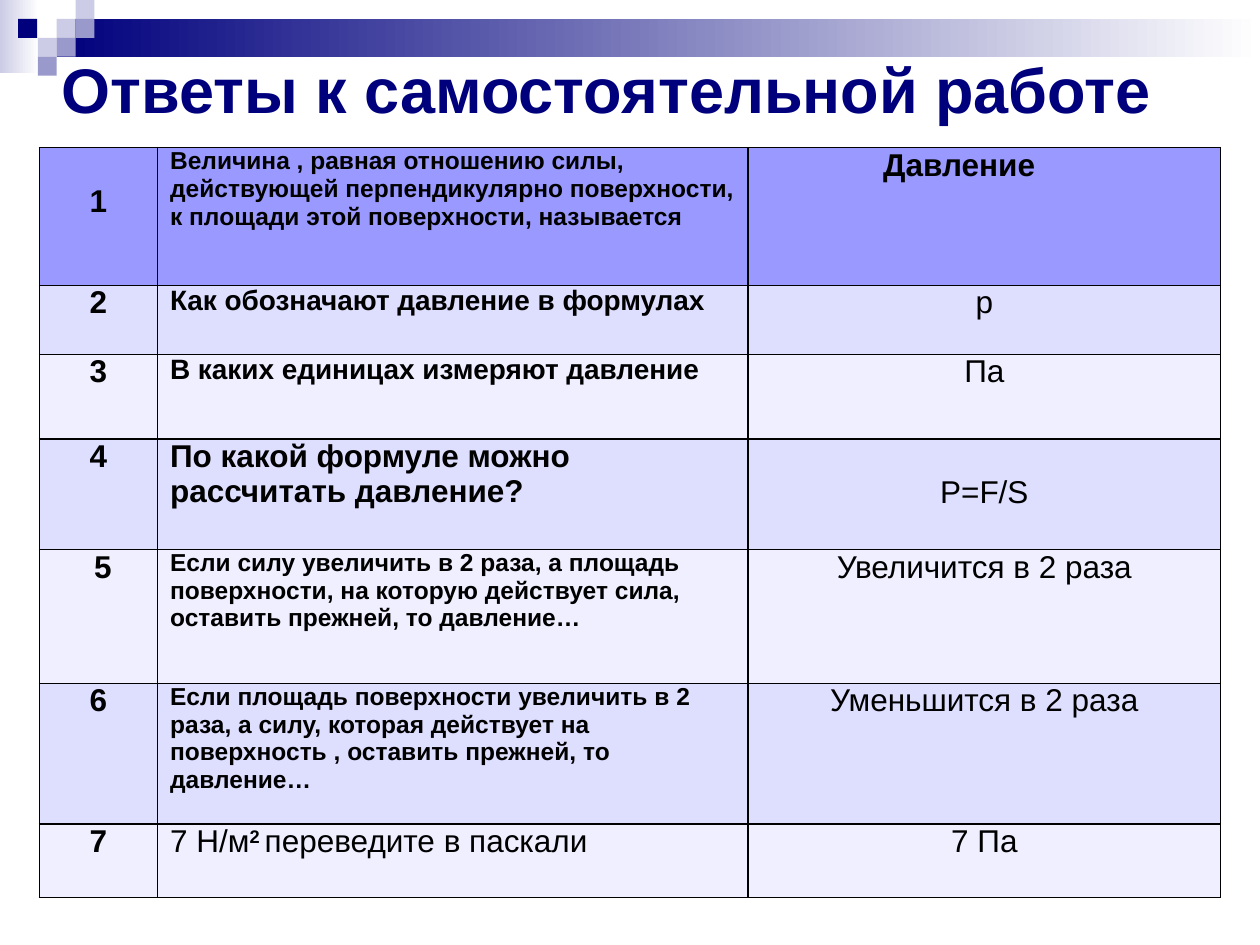
from lxml import etree
from pptx import Presentation
from pptx.dml.color import RGBColor
from pptx.enum import shapes, text
from pptx.oxml import ns
from pptx.util import Pt

COLORS = {
    "navy": "00007D", "mid": "9999CC", "pale": "CCCCE6", "white": "FFFFFF",
    "black": "000000", "head": "9999FF", "even": "DEDEFF", "odd": "EFEFFF",
}


def color(name):
    return RGBColor.from_string(COLORS[name])


def write(frame, words, size=18, bold=True, ink="black", center=False, sup=False):
    """Add a run to the frame's first paragraph."""
    para = frame.paragraphs[0]
    para.alignment = text.PP_ALIGN.CENTER if center else text.PP_ALIGN.LEFT
    run = para.add_run()
    run.text = words
    run.font.name = "Arial"
    run.font.size = Pt(size)
    run.font.bold = bold
    run.font.color.rgb = color(ink)
    if sup:
        run.font._element.set("baseline", "30000")


deck = Presentation()
deck.slide_width, deck.slide_height = Pt(720), Pt(540)
slide = deck.slides.add_slide(deck.slide_layouts[5])

# Corner ornament: two fading bands and small squares
tiles = [
    (0, 0, 22.3, 41.8, "pale", True),
    (32.4, 10.8, 687.6, 21.6, "navy", True),
]
squares = [
    (32.4, 10.8, "pale"), (43.2, 0, "pale"), (43.2, 10.8, "mid"),
    (21.6, 21.6, "pale"), (10.4, 10.8, "navy"), (32.4, 21.6, "mid"),
    (21.6, 32.4, "mid"),
]
tiles += [(x, y, 10.8, 10.8, tone, False) for x, y, tone in squares]
for x, y, w, h, tone, fade in tiles:
    tile = slide.shapes.add_shape(
        shapes.MSO_SHAPE.RECTANGLE, Pt(x), Pt(y), Pt(w), Pt(h))
    tile.shadow.inherit = False
    tile.line.fill.background()
    if fade:
        tile.fill.gradient()
        tile.fill.gradient_angle = 0
        for stop, name in zip(tile.fill.gradient_stops, (tone, "white")):
            stop.color.rgb = color(name)
    else:
        tile.fill.solid()
        tile.fill.fore_color.rgb = color(tone)

title = slide.shapes.title
title.left, title.top, title.width, title.height = Pt(28), Pt(22.3), Pt(648), Pt(56.2)
title.text_frame.vertical_anchor = text.MSO_ANCHOR.MIDDLE
write(title.text_frame, "Ответы к самостоятельной работе", size=36, ink="navy")

# Question, its size, answer
rows = [
    ("Величина , равная отношению силы, действующей перпендикулярно "
     "поверхности, к площади этой поверхности, называется", 14, "Давление"),
    ("Как обозначают давление в формулах", 16, "р"),
    ("В каких единицах измеряют давление", 16, "Па"),
    ("По какой формуле можно рассчитать давление?", 18, "Р=F/S"),
    ("Если силу увеличить в 2 раза, а площадь поверхности, на которую "
     "действует сила, оставить прежней, то давление…", 14, "Увеличится в 2 раза"),
    ("Если площадь поверхности увеличить в 2 раза, а силу, которая действует "
     "на поверхность , оставить прежней, то давление…", 14, "Уменьшится в 2 раза"),
    ("", 18, "7 Па"),
]
widths = [67.5, 337.5, 270]
heights = [78.7, 39.4, 48.4, 63.2, 76.5, 80.3, 42]
table = slide.shapes.add_table(
    len(rows), len(widths), Pt(22.5), Pt(84.4), Pt(sum(widths)), Pt(sum(heights))).table
table.first_row = table.horz_banding = False
for col, width in zip(table.columns, widths):
    col.width = Pt(width)
for row, height in zip(table.rows, heights):
    row.height = Pt(height)

for i, (ask, size, answer) in enumerate(rows):
    for cell in table.rows[i].cells:
        cell.margin_left = cell.margin_right = Pt(7.2)
        cell.margin_top = cell.margin_bottom = 0
        props = cell._tc.get_or_add_tcPr()
        for side in ("lnL", "lnR", "lnT", "lnB"):
            line = etree.SubElement(props, ns.qn("a:" + side), w=str(Pt(1)))
            fill = etree.SubElement(line, ns.qn("a:solidFill"))
            etree.SubElement(fill, ns.qn("a:srgbClr"), val=COLORS["black"])
        cell.fill.solid()
        cell.fill.fore_color.rgb = color("head" if i == 0 else "even" if i % 2 else "odd")
    number, query, reply = table.rows[i].cells
    write(number.text_frame, str(i + 1), center=True)
    if ask:
        write(query.text_frame, ask, size=size)
    write(reply.text_frame, answer, bold=i == 0, center=i > 0)

unit = table.cell(6, 1).text_frame
write(unit, "7 Н/м", bold=False)
write(unit, "2 ", sup=True)
write(unit, "переведите в паскали", bold=False)

# Cells whose text is set lower or further right
table.cell(0, 0).margin_top = table.cell(3, 2).margin_top = Pt(20.7)
table.cell(0, 2).margin_left = Pt(77.2)
table.cell(4, 0).margin_left = Pt(12.2)

deck.save("out.pptx")
